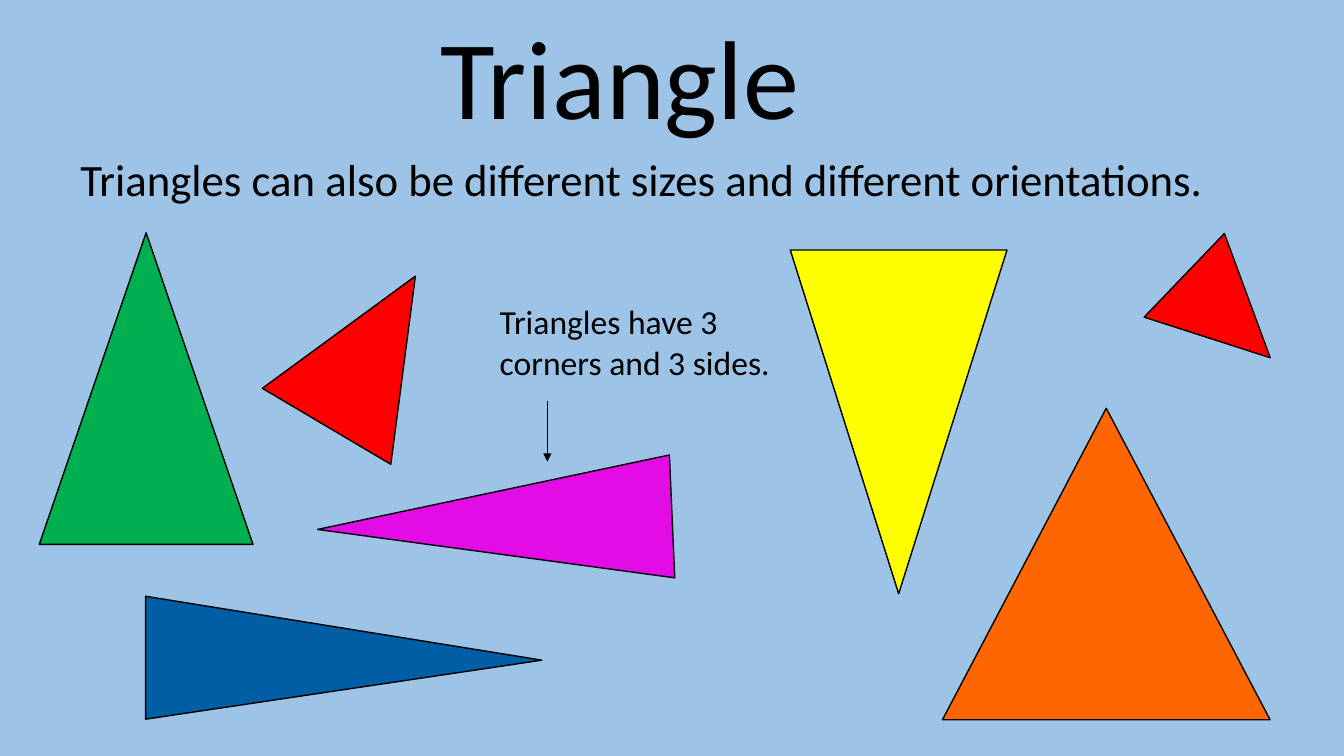
from pptx import Presentation
from pptx.dml.color import RGBColor
from pptx.enum.shapes import MSO_CONNECTOR as Link, MSO_SHAPE as Kind
from pptx.enum.text import MSO_ANCHOR as Anchor, MSO_AUTO_SIZE as Fit, PP_ALIGN as Align
from pptx.oxml.ns import qn
from pptx.util import Pt
from lxml import etree


def tint(text):
    return RGBColor.from_string(text)


def write(box, text, size, wrap):
    frame = box.text_frame
    frame.text = text
    frame.word_wrap = wrap
    frame.auto_size = Fit.NONE
    frame.vertical_anchor = Anchor.TOP
    font = frame.paragraphs[0].runs[0].font
    font.name = "Calibri"
    font.size = Pt(size)
    font.color.rgb = tint("000000")


deck = Presentation()
deck.slide_width, deck.slide_height = Pt(960), Pt(540)
slide = deck.slides.add_slide(deck.slide_layouts[5])
slide.background.fill.solid()
slide.background.fill.fore_color.rgb = tint("9DC3E6")
shapes = slide.shapes

title = shapes.title
title.left, title.top = Pt(306), Pt(1.5)
title.width, title.height = Pt(273.6), Pt(104.4)
write(title, "Triangle", 80, False)
title.text_frame.paragraphs[0].alignment = Align.CENTER

lead = shapes.add_textbox(Pt(50.4), Pt(105), Pt(991.4), Pt(46))
write(lead, "Triangles can also be different sizes and different orientations.", 32, True)

parts = [
    (28.1, 166.3, 152.6, 222.5, 0, 0.5, "00B050"),
    (211.7, 188.6, 106.6, 124.6, 30.6, 0.5, "FF0000"),
    (201.6, 328.3, 87.8, 283, 90, 0.52, "005EA4"),
    (673.2, 291.6, 234, 222.5, 0, 0.5, "FF6600"),
    (564.5, 178.6, 154.8, 245.5, 180, 0.5, "FFFF00"),
    (835.2, 183.6, 82.8, 85, 133.8, 0.5, "FF0000"),
    (309.6, 247.7, 87.8, 253.4, 267.5, 0.52, "E40CE4"),
]
for left, top, width, height, turn, peak, fill in parts:
    piece = shapes.add_shape(Kind.ISOSCELES_TRIANGLE, Pt(left), Pt(top), Pt(width), Pt(height))
    piece.adjustments[0] = peak
    piece.rotation = turn
    piece.shadow.inherit = False
    piece.fill.solid()
    piece.fill.fore_color.rgb = tint(fill)
    piece.line.color.rgb = tint("000000")
    piece.line.width = Pt(1)

arrow = shapes.add_connector(Link.STRAIGHT, Pt(391), Pt(286.6), Pt(391), Pt(329.8))
arrow.line.color.rgb = tint("000000")
arrow.line.width = Pt(0.5)
etree.SubElement(arrow.line._get_or_add_ln(), qn("a:tailEnd"), type="triangle")
etree.SubElement(arrow._element.spPr, qn("a:effectLst"))

note = shapes.add_textbox(Pt(349.9), Pt(211.7), Pt(216), Pt(65.5))
write(note, "Triangles have 3 corners and 3 sides.", 24, True)

deck.save("out.pptx")
